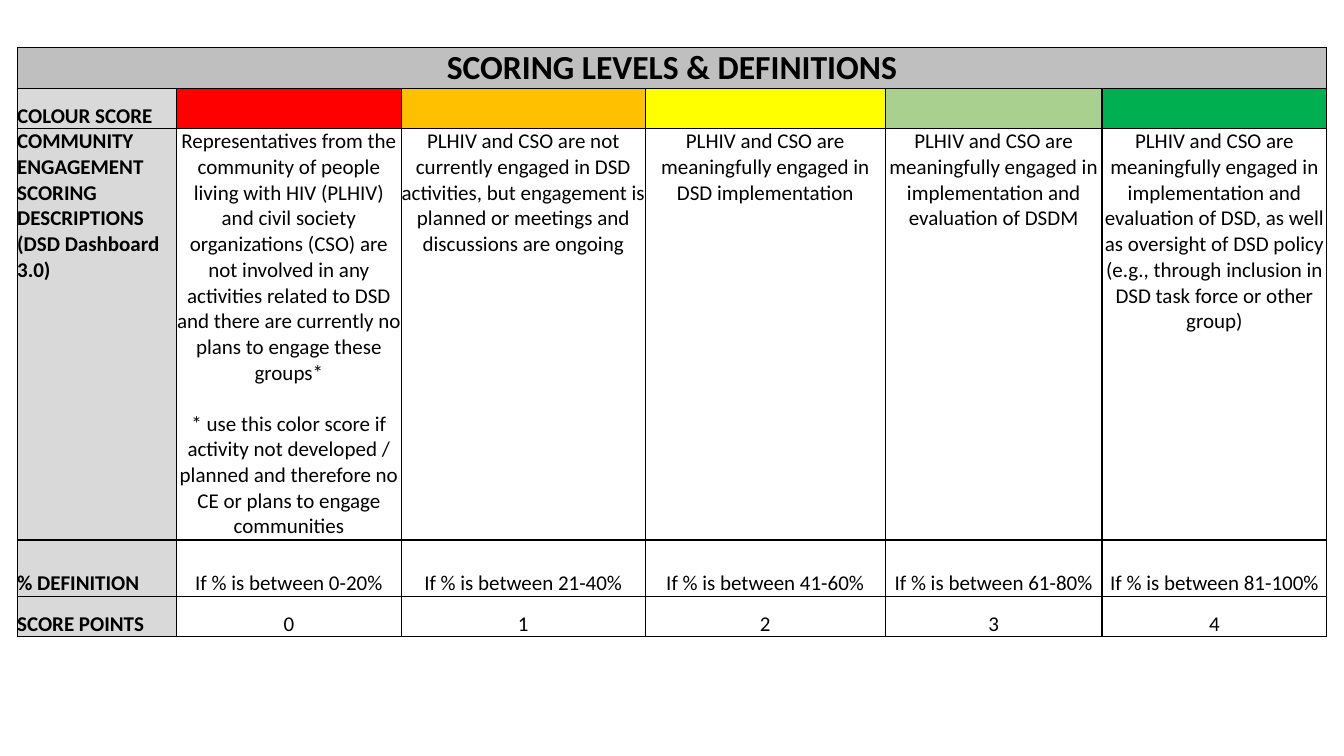
from dataclasses import dataclass

from lxml.etree import SubElement
from pptx import Presentation
from pptx.dml.color import RGBColor
from pptx.enum.text import MSO_ANCHOR, PP_ALIGN
from pptx.oxml.ns import qn
from pptx.table import _Cell
from pptx.util import Emu, Pt

PX = 9144
FONT = "Calibri"
BLACK, WHITE = "000000", "FFFFFF"
TITLE_GREY, LABEL_GREY = "BFBFBF", "D9D9D9"
COLUMN_WIDTHS = [158, 223, 242, 238, 215, 223]
ROW_HEIGHTS = [40, 40, 408, 56, 40]
TABLE_LEFT, TABLE_TOP = 17, 47


@dataclass
class Level:
    colour: str
    percent: str
    description: str
    footnote: str = ""


LABELS = [
    "COLOUR SCORE",
    "COMMUNITY ENGAGEMENT SCORING DESCRIPTIONS (DSD Dashboard 3.0)",
    "% DEFINITION",
    "SCORE POINTS",
]
LEVELS = [
    Level("FF0000", "0-20%",
          "Representatives from the community of people living with HIV (PLHIV) and civil "
          "society organizations (CSO) are not involved in any activities related to DSD and "
          "there are currently no plans to engage these groups*",
          "* use this color score if activity not developed / planned and therefore no CE or "
          "plans to engage communities"),
    Level("FFC000", "21-40%",
          "PLHIV and CSO are not currently engaged in DSD activities, but engagement is planned "
          "or meetings and discussions are ongoing"),
    Level("FFFF00", "41-60%", "PLHIV and CSO are meaningfully engaged in DSD implementation"),
    Level("A9D08E", "61-80%",
          "PLHIV and CSO are meaningfully engaged in implementation and evaluation of DSDM"),
    Level("00B050", "81-100%",
          "PLHIV and CSO are meaningfully engaged in implementation and evaluation of DSD, as "
          "well as oversight of DSD policy (e.g., through inclusion in DSD task force or other "
          "group)"),
]


def px(length: int) -> Emu:
    return Emu(length * PX)


def rgb(colour: str) -> RGBColor:
    return RGBColor.from_string(colour)


def style_cell(cell: _Cell, fill: str, anchor: MSO_ANCHOR) -> None:
    """Give the cell no margins, a thin black border and a fill."""
    cell.margin_left = cell.margin_right = cell.margin_top = cell.margin_bottom = 0
    cell.vertical_anchor = anchor
    # The schema wants the borders ahead of the fill.
    properties = cell._tc.get_or_add_tcPr()
    for side in ("a:lnL", "a:lnR", "a:lnT", "a:lnB"):
        border = SubElement(properties, qn(side), w=str(Pt(1)))
        SubElement(SubElement(border, qn("a:solidFill")), qn("a:srgbClr"), val=BLACK)
    cell.fill.solid()
    cell.fill.fore_color.rgb = rgb(fill)


def write(cell: _Cell, *texts: str, size: int = 15, bold: bool = False,
          align: PP_ALIGN = PP_ALIGN.CENTER) -> None:
    frame = cell.text_frame
    for index, text in enumerate(texts):
        para = frame.add_paragraph() if index else frame.paragraphs[0]
        if index:
            para.space_before = Pt(18)
        para.alignment = align
        span = para.add_run()
        span.text = text
        span.font.name = FONT
        span.font.size = Pt(size)
        span.font.bold = bold
        span.font.color.rgb = rgb(BLACK)


def main() -> None:
    deck = Presentation()
    deck.slide_width, deck.slide_height = px(1333), px(750)
    page = deck.slides.add_slide(deck.slide_layouts[6])
    table = page.shapes.add_table(
        len(ROW_HEIGHTS), len(COLUMN_WIDTHS), px(TABLE_LEFT), px(TABLE_TOP),
        px(sum(COLUMN_WIDTHS)), px(sum(ROW_HEIGHTS))).table
    table.first_row = table.horz_banding = False
    for column, width in zip(table.columns, COLUMN_WIDTHS):
        column.width = px(width)
    for row, height in zip(table.rows, ROW_HEIGHTS):
        row.height = px(height)

    for cell in table.rows[0].cells:
        style_cell(cell, TITLE_GREY, MSO_ANCHOR.MIDDLE)
    heading = table.cell(0, 0)
    heading.merge(table.cell(0, len(LEVELS)))
    write(heading, "SCORING LEVELS & DEFINITIONS", size=24, bold=True)

    anchors = [MSO_ANCHOR.BOTTOM, MSO_ANCHOR.TOP, MSO_ANCHOR.BOTTOM, MSO_ANCHOR.BOTTOM]
    for row, (label, anchor) in enumerate(zip(LABELS, anchors), start=1):
        cell = table.cell(row, 0)
        style_cell(cell, LABEL_GREY, anchor)
        write(cell, label, bold=True, align=PP_ALIGN.LEFT)

    for points, level in enumerate(LEVELS):
        description = [level.description]
        if level.footnote:
            description.append(level.footnote)
        contents = [[], description, [f"If % is between {level.percent}"], [str(points)]]
        for row, (texts, anchor) in enumerate(zip(contents, anchors), start=1):
            cell = table.cell(row, points + 1)
            style_cell(cell, WHITE if texts else level.colour, anchor)
            write(cell, *texts)

    deck.save("out.pptx")


if __name__ == "__main__":
    main()
